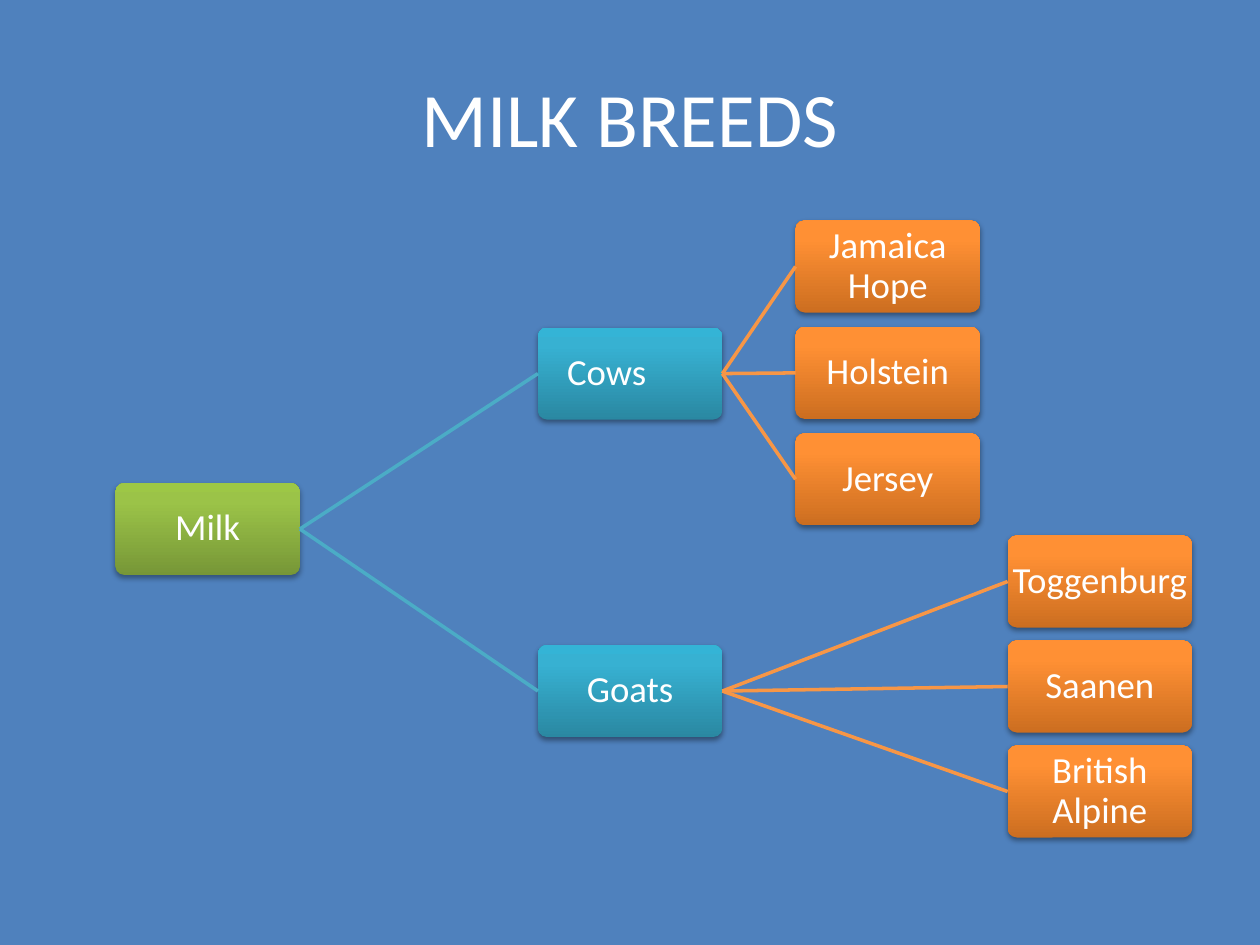
import copy

import pptx
import pptx.dml.color
import pptx.enum.shapes
import pptx.enum.text
import pptx.oxml
import pptx.oxml.ns
import pptx.util

Pt = pptx.util.Pt
FONT = "Calibri"
WHITE = "FFFFFF"
NODE_WIDTH, NODE_HEIGHT = 105.4, 52.6

# Gradient colours from bottom to top, shadow strength and distance
GREEN = {"stops": ("779737", "9BC348", "9DC746"), "alpha": 35, "distance": 1.8}
TEAL = {"stops": ("2A88A2", "37B1D2", "34B4D6"), "alpha": 38, "distance": 1.6}
ORANGE = {"stops": ("CC6E20", "FF9034", "FF9136"), "alpha": 38, "distance": 1.6}
TEAL_LINE, ORANGE_LINE = "4BACC6", "F79646"

# Groups: name, top, breeds, breed left, first breed top, breed step
GROUPS = [
    ("Cows\t", 61.2, ("Jamaica Hope", "Holstein", "Jersey"), 388.6, 0, 60.8),
    ("Goats", 242.6, ("Toggenburg", "Saanen", "British Alpine"), 509.8, 180, 60),
]


def colour(value):
    return pptx.dml.color.RGBColor.from_string(value)


def set_values(target, values):
    for name, value in values.items():
        setattr(target, name, value)


def write_text(shape, text, size, inset, line_spacing):
    frame = shape.text_frame
    set_values(frame, {
        "word_wrap": True,
        "vertical_anchor": pptx.enum.text.MSO_ANCHOR.MIDDLE,
        "margin_left": Pt(inset), "margin_right": Pt(inset),
        "margin_top": Pt(inset), "margin_bottom": Pt(inset),
    })
    para = frame.paragraphs[0]
    set_values(para, {"alignment": pptx.enum.text.PP_ALIGN.CENTER,
                      "line_spacing": line_spacing})
    span = para.add_run()
    span.text = text
    set_values(span.font, {"name": FONT, "size": Pt(size)})
    span.font.color.rgb = colour(WHITE)


def paint_gradient(shape, stops):
    shape.fill.gradient()
    shape.fill.gradient_angle = 90
    # The default gradient has two stops; add the third
    stop_list = shape.element.spPr.find(".//" + pptx.oxml.ns.qn("a:gsLst"))
    stop_list.append(copy.deepcopy(stop_list[-1]))
    for stop, position, value in zip(shape.fill.gradient_stops, (0, 0.8, 1), stops):
        stop.position = position
        stop.color.rgb = colour(value)


def add_shadow(shape, alpha, distance):
    shape.shadow.inherit = False
    effects = shape.element.spPr.find(pptx.oxml.ns.qn("a:effectLst"))
    effects.append(pptx.oxml.parse_xml(
        f'<a:outerShdw {pptx.oxml.ns.nsdecls("a")} blurRad="{Pt(3.1)}" '
        f'dist="{Pt(distance)}" dir="5400000" rotWithShape="0">'
        f'<a:srgbClr val="000000"><a:alpha val="{alpha * 1000}"/></a:srgbClr>'
        '</a:outerShdw>'))


def add_node(page, left, top, text, style):
    node = page.shapes.add_shape(
        pptx.enum.shapes.MSO_SHAPE.ROUNDED_RECTANGLE,
        Pt(left), Pt(top), Pt(NODE_WIDTH), Pt(NODE_HEIGHT))
    node.adjustments[0] = 0.1
    node.line.fill.background()
    paint_gradient(node, style["stops"])
    add_shadow(node, style["alpha"], style["distance"])
    write_text(node, text, 21, 0.72, 0.9)
    return node


def join_nodes(page, parent, child, line_colour):
    link = page.shapes.add_connector(
        pptx.enum.shapes.MSO_CONNECTOR.STRAIGHT, 0, 0, 0, 0)
    link.begin_connect(parent, 3)
    link.end_connect(child, 1)
    link.line.width = Pt(2)
    link.line.color.rgb = colour(line_colour)
    link.element.spPr.append(pptx.oxml.parse_xml(
        f'<a:effectLst {pptx.oxml.ns.nsdecls("a")}/>'))


def add_title(page, box):
    title = page.shapes.add_textbox(*(Pt(length) for length in box))
    write_text(title, "MILK BREEDS", 44, 3.6, 1.0)


def add_breed_tree(page, box):
    left, top, _, _ = box

    # Root
    root = add_node(page, left, top + 150, "Milk", GREEN)

    # Animals, each with its breeds
    for name, group_top, breeds, breed_left, first_top, step in GROUPS:
        group = add_node(page, left + 241.4, top + group_top, name, TEAL)
        join_nodes(page, root, group, TEAL_LINE)
        for index, breed in enumerate(breeds):
            leaf = add_node(page, left + breed_left,
                            top + first_top + index * step, breed, ORANGE)
            join_nodes(page, group, leaf, ORANGE_LINE)


def main():
    deck = pptx.Presentation()
    set_values(deck, {"slide_width": Pt(720), "slide_height": Pt(540)})
    page = deck.slides.add_slide(deck.slide_layouts[6])
    page.background.fill.solid()
    page.background.fill.fore_color.rgb = colour("4F81BD")
    add_title(page, (36, 21.6, 648, 90))
    add_breed_tree(page, (66, 126, 615.2, 352.6))
    deck.save("out.pptx")


if __name__ == "__main__":
    main()
